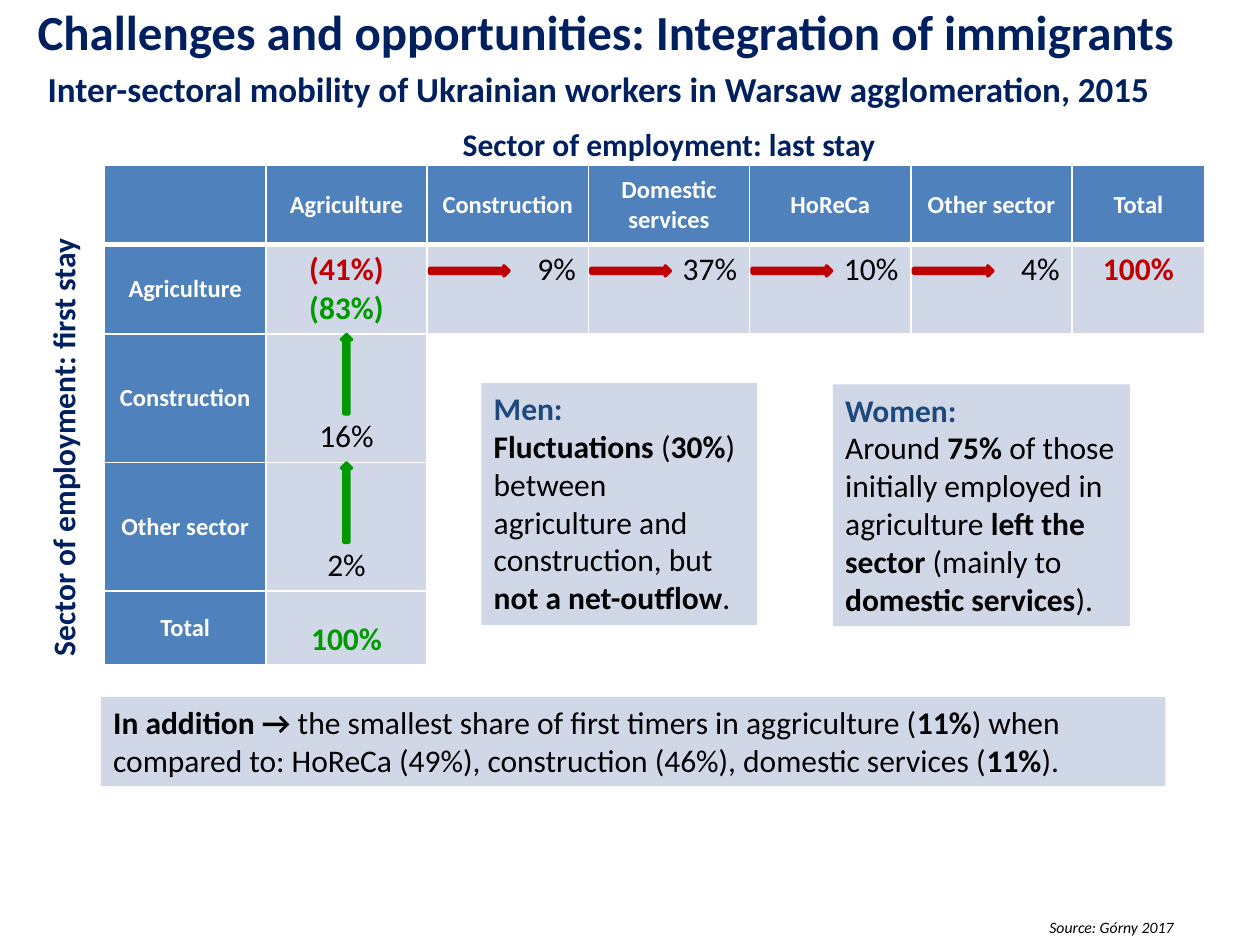
from itertools import accumulate

from lxml.etree import SubElement
from pptx import Presentation
from pptx.dml.color import RGBColor
from pptx.enum.shapes import MSO_SHAPE
from pptx.enum.text import MSO_ANCHOR, PP_ALIGN
from pptx.oxml.ns import qn
from pptx.util import Inches, Pt

COLORS = {
    "navy": "002060", "heading": "1F497D", "header": "4F81BD", "panel": "D0D8E8",
    "red": "C00000", "green": "009900", "black": "000000", "white": "FFFFFF",
}
LEFT, CENTER, RIGHT = PP_ALIGN.LEFT, PP_ALIGN.CENTER, PP_ALIGN.RIGHT
TOP, MIDDLE, BOTTOM = MSO_ANCHOR.TOP, MSO_ANCHOR.MIDDLE, MSO_ANCHOR.BOTTOM

# Paragraphs are (text, colour); ** switches bold on and off.
LABELS = [
    dict(at=(0.28, 0.45, 10, 0.5), size=20, anchor=MIDDLE, paragraphs=[
        ("**Inter-sectoral mobility of Ukrainian workers in Warsaw agglomeration, 2015**", "navy")]),
    dict(at=(1.65, 0.94, 7.32, 0.4), align=CENTER, paragraphs=[
        ("**Sector of employment: last stay**", "navy")]),
    dict(at=(-1.35, 3.35, 3.7, 0.4), align=CENTER, rotation=270, paragraphs=[
        ("**Sector of employment: first stay**", "navy")]),
    dict(at=(0.2, -0.04, 10, 0.57), size=28, paragraphs=[
        ("**Challenges and opportunities: Integration of immigrants**", "navy")]),
    dict(at=(8.23, 7.23, 1.94, 0.25), size=9, anchor=MIDDLE, italic=True, paragraphs=[
        ("Source: Górny 2017", "black")]),
]
PANELS = [
    dict(at=(3.82, 3.04, 2.19, 1.92), paragraphs=[
        ("**Men:**", "heading"),
        ("**Fluctuations** (**30%**)", "black"),
        ("between agriculture and construction, but **not a net-outflow**.", "black")]),
    dict(at=(6.61, 3.05, 2.36, 1.92), paragraphs=[
        ("**Women:**", "heading"),
        ("Around **75% **of those initially employed in agriculture **left the sector **"
         "(mainly to **domestic services**).", "black")]),
    dict(at=(0.8, 5.53, 8.45, 0.71), paragraphs=[
        ("**In addition → **the smallest share of first timers in aggriculture (**11%**) when "
         "compared to: HoReCa (49%), construction (46%), domestic services (**11%**).", "black")]),
]

TABLE_LEFT, TABLE_TOP = 0.83, 1.31
COLUMN_WIDTHS = [1.28] * 6 + [1.05]
ROW_HEIGHTS = [0.63, 0.66, 1.02, 1.02, 0.59]
COLUMN_HEADS = ["", "Agriculture", "Construction", "Domestic services", "HoReCa",
                "Other sector", "Total"]
ROW_HEADS = ["Agriculture", "Construction", "Other sector", "Total"]
VALUES = {  # (row, column): paragraphs, alignment, anchor
    (1, 1): ([("**(41%)**", "red"), ("**(83%)**", "green")], CENTER, TOP),
    (1, 2): ([("9%", "black")], RIGHT, TOP),
    (1, 3): ([("37%", "black")], RIGHT, TOP),
    (1, 4): ([("10%", "black")], RIGHT, TOP),
    (1, 5): ([("4%", "black")], RIGHT, TOP),
    (1, 6): ([("**100%**", "red")], CENTER, TOP),
    (2, 1): ([("16%", "black")], CENTER, BOTTOM),
    (3, 1): ([("2%", "black")], CENTER, BOTTOM),
    (4, 1): ([("**100%**", "green")], CENTER, BOTTOM),
}
ARROW_LENGTH, ARROW_HEIGHT = 0.63, 0.08


def rgb(name):
    return RGBColor.from_string(COLORS[name])


def paint(fill, name):
    fill.solid()
    fill.fore_color.rgb = rgb(name)


def write(frame, paragraphs, size=18, align=LEFT, italic=False):
    for index, (text, color) in enumerate(paragraphs):
        para = frame.paragraphs[0] if index == 0 else frame.add_paragraph()
        para.alignment = align
        for position, part in enumerate(text.split("**")):
            if not part:
                continue
            span = para.add_run()
            span.text = part
            span.font.color.rgb = rgb(color)
            font_format = {"name": "Calibri", "size": Pt(size),
                           "bold": position % 2 == 1, "italic": italic}
            for key, value in font_format.items():
                setattr(span.font, key, value)


def add_label(slide, at, paragraphs, anchor=TOP, rotation=0, **text_format):
    box = slide.shapes.add_textbox(*map(Inches, at))
    box.rotation = rotation
    box.text_frame.word_wrap = True
    box.text_frame.vertical_anchor = anchor
    write(box.text_frame, paragraphs, **text_format)


def add_panel(slide, at, paragraphs):
    panel = slide.shapes.add_shape(MSO_SHAPE.RECTANGLE, *map(Inches, at))
    panel.shadow.inherit = False
    paint(panel.fill, "panel")
    panel.line.fill.background()
    panel.text_frame.word_wrap = True
    panel.text_frame.vertical_anchor = TOP
    write(panel.text_frame, paragraphs)


def add_arrow(slide, center_x, center_y, color, rotation=0):
    arrow = slide.shapes.add_shape(
        MSO_SHAPE.RIGHT_ARROW, Inches(center_x - ARROW_LENGTH / 2),
        Inches(center_y - ARROW_HEIGHT / 2), Inches(ARROW_LENGTH), Inches(ARROW_HEIGHT))
    arrow.rotation = rotation
    arrow.shadow.inherit = False
    paint(arrow.fill, color)
    paint(arrow.line.fill, color)
    arrow.line.width = Pt(2)


def add_borders(cell, row):
    """White rules, with a thick one under the header row."""
    properties = cell._tc.get_or_add_tcPr()
    widths = {"lnL": 1, "lnR": 1, "lnT": 3 if row == 1 else 1, "lnB": 3 if row == 0 else 1}
    for tag, width in widths.items():
        line = SubElement(properties, qn(f"a:{tag}"), w=str(Pt(width)))
        fill = SubElement(line, qn("a:solidFill"))
        SubElement(fill, qn("a:srgbClr"), val=COLORS["white"])


def add_mobility_table(slide):
    table = slide.shapes.add_table(
        len(ROW_HEIGHTS), len(COLUMN_WIDTHS), Inches(TABLE_LEFT), Inches(TABLE_TOP),
        Inches(sum(COLUMN_WIDTHS)), Inches(sum(ROW_HEIGHTS))).table
    table.horz_banding = False
    for column, width in zip(table.columns, COLUMN_WIDTHS):
        column.width = Inches(width)
    for row, height in zip(table.rows, ROW_HEIGHTS):
        row.height = Inches(height)
    for row in range(len(ROW_HEIGHTS)):
        for column in range(len(COLUMN_WIDTHS)):
            cell = table.cell(row, column)
            add_borders(cell, row)
            if row == 0 or column == 0:
                head = COLUMN_HEADS[column] if row == 0 else ROW_HEADS[row - 1]
                paint(cell.fill, "header")
                cell.vertical_anchor = MIDDLE
                write(cell.text_frame, [(f"**{head}**", "white")], size=14, align=CENTER)
            elif (row, column) in VALUES:
                paragraphs, align, anchor = VALUES[row, column]
                paint(cell.fill, "panel")
                cell.vertical_anchor = anchor
                write(cell.text_frame, paragraphs, align=align)
            else:
                cell.fill.background()


def add_flow_arrows(slide):
    column_lefts = list(accumulate(COLUMN_WIDTHS, initial=TABLE_LEFT))
    row_tops = list(accumulate(ROW_HEIGHTS, initial=TABLE_TOP))
    for column in range(2, 6):
        add_arrow(slide, column_lefts[column] + 0.02 + ARROW_LENGTH / 2,
                  row_tops[1] + 0.21, "red")
    for row in (2, 3):
        add_arrow(slide, column_lefts[1] + COLUMN_WIDTHS[1] / 2,
                  row_tops[row] + 0.37, "green", rotation=270)


def main():
    deck = Presentation()
    deck.slide_width, deck.slide_height = Inches(10), Inches(7.5)
    slide = deck.slides.add_slide(deck.slide_layouts[6])
    add_mobility_table(slide)
    add_flow_arrows(slide)
    for label in LABELS:
        add_label(slide, **label)
    for panel in PANELS:
        add_panel(slide, **panel)
    deck.save("out.pptx")


if __name__ == "__main__":
    main()
